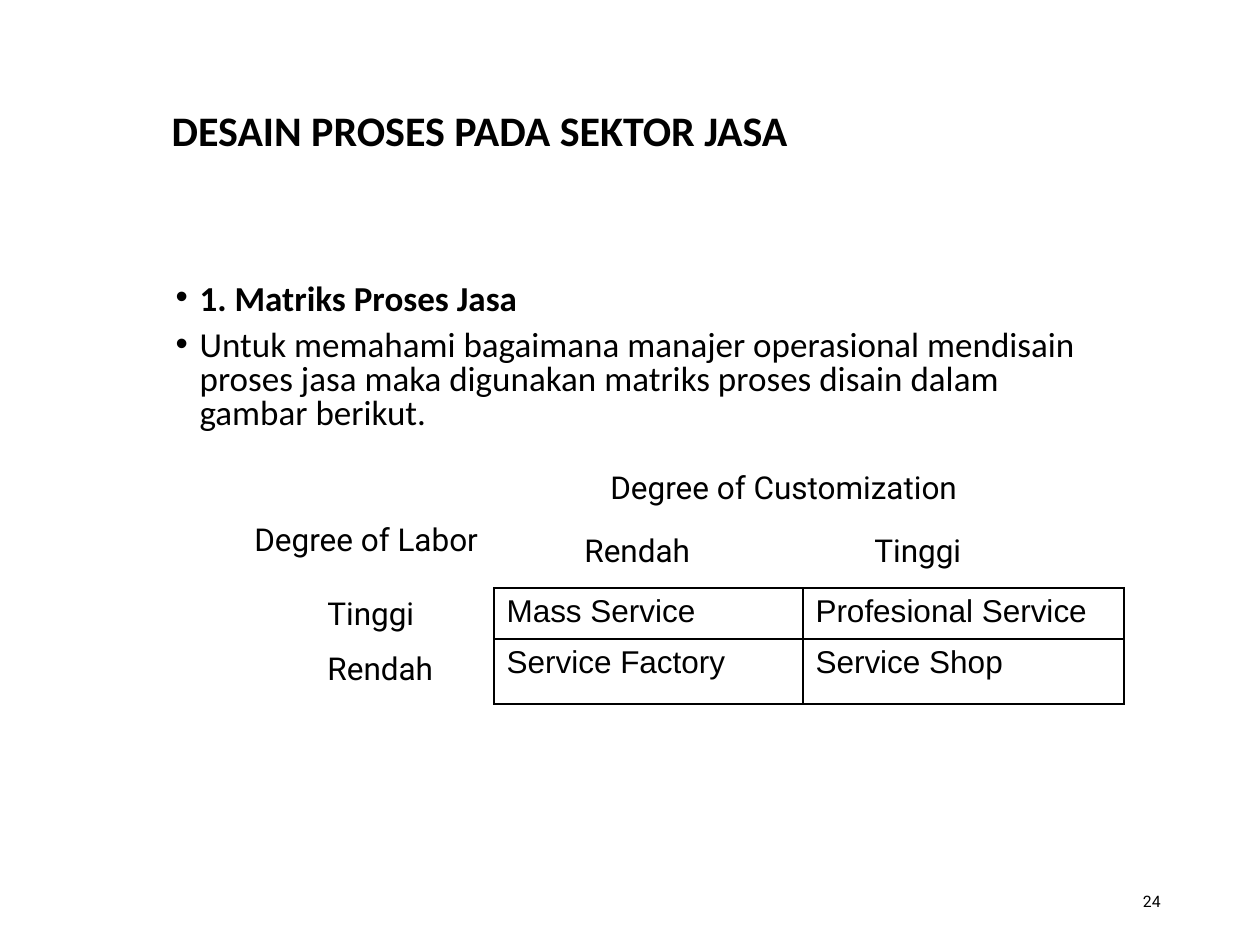
from lxml import etree
from pptx import Presentation
from pptx import util as u
from pptx.dml.color import RGBColor
from pptx.enum import text as t
from pptx.oxml.ns import qn

BLACK = RGBColor(0, 0, 0)
PX = 914400 // 126


def box(shape, x, y, w, h):
    shape.left, shape.top = x * PX, y * PX
    shape.width, shape.height = w * PX, h * PX


def style(par, font, size, bold=False):
    for run in par.runs:
        run.font.name = font
        run.font.size = u.Pt(size)
        run.font.bold = bold
        run.font.color.rgb = BLACK


deck = Presentation()
deck.slide_width, deck.slide_height = u.Inches(10), u.Inches(7.5)
slide = deck.slides.add_slide(deck.slide_layouts[1])

# Title
title = slide.shapes.title
box(title, 159, 32, 1074, 202)
frame = title.text_frame
frame.text = "DESAIN PROSES PADA SEKTOR JASA"
frame.vertical_anchor = t.MSO_ANCHOR.MIDDLE
frame.auto_size = t.MSO_AUTO_SIZE.NONE
par = frame.paragraphs[0]
par.alignment = t.PP_ALIGN.LEFT
par.line_spacing = 0.9
style(par, "Calibri", 24, True)

# Bulleted introduction
body = slide.placeholders[1]
box(body, 163, 278, 960, 174)
frame = body.text_frame
frame.text = (
    "1. Matriks Proses Jasa\n"
    "Untuk memahami bagaimana manajer operasional mendisain proses jasa "
    "maka digunakan matriks proses disain dalam gambar berikut."
)
frame.auto_size = t.MSO_AUTO_SIZE.NONE
for i, par in enumerate(frame.paragraphs):
    par.line_spacing = 0.8
    par.space_before = u.Pt(7.5)
    style(par, "Calibri", 20, i == 0)
    prop = par._p.get_or_add_pPr()
    prop.set("marL", str(24 * PX))
    prop.set("indent", str(-24 * PX))

# Service matrix
cells = [
    ["Mass Service", "Profesional Service"],
    ["Service Factory", "Service Shop"],
]
grid = slide.shapes.add_table(2, 2, 494 * PX, 588 * PX, 630 * PX, 116 * PX).table
for col, w in zip(grid.columns, (309, 321)):
    col.width = w * PX
for row, h, names in zip(grid.rows, (51, 65), cells):
    row.height = h * PX
    for cell, name in zip(row.cells, names):
        cell.text = name
        style(cell.text_frame.paragraphs[0], "Arial", 18)
        prop = cell._tc.get_or_add_tcPr()
        for side in ("a:lnL", "a:lnR", "a:lnT", "a:lnB"):
            line = etree.SubElement(prop, qn(side), w=str(u.Pt(1)))
            fill = etree.SubElement(line, qn("a:solidFill"))
            etree.SubElement(fill, qn("a:srgbClr"), val=str(BLACK))
        cell.fill.background()

# Axis labels and page number
labels = [
    ("Degree of Customization", 598, 462, 378, 50, 18),
    ("Rendah\tTinggi", 572, 525, 520, 50, 18),
    ("Degree of Labor", 242, 514, 252, 50, 18),
    ("Tinggi\nRendah", 315, 588, 168, 107, 18),
    ("24", 890, 876, 283, 50, 9),
]
for words, x, y, w, h, size in labels:
    label = slide.shapes.add_textbox(x * PX, y * PX, w * PX, h * PX)
    frame = label.text_frame
    frame.word_wrap = True
    frame.text = words
    for i, par in enumerate(frame.paragraphs):
        style(par, "Roboto", size)
        if i:
            par.space_before = u.Pt(10)
        if "\t" in words:
            stops = etree.SubElement(par._p.get_or_add_pPr(), qn("a:tabLst"))
            etree.SubElement(stops, qn("a:tab"), pos=str(290 * PX), algn="l")

# The last label is the page number
frame.vertical_anchor = t.MSO_ANCHOR.MIDDLE
par.alignment = t.PP_ALIGN.RIGHT

deck.save("out.pptx")
